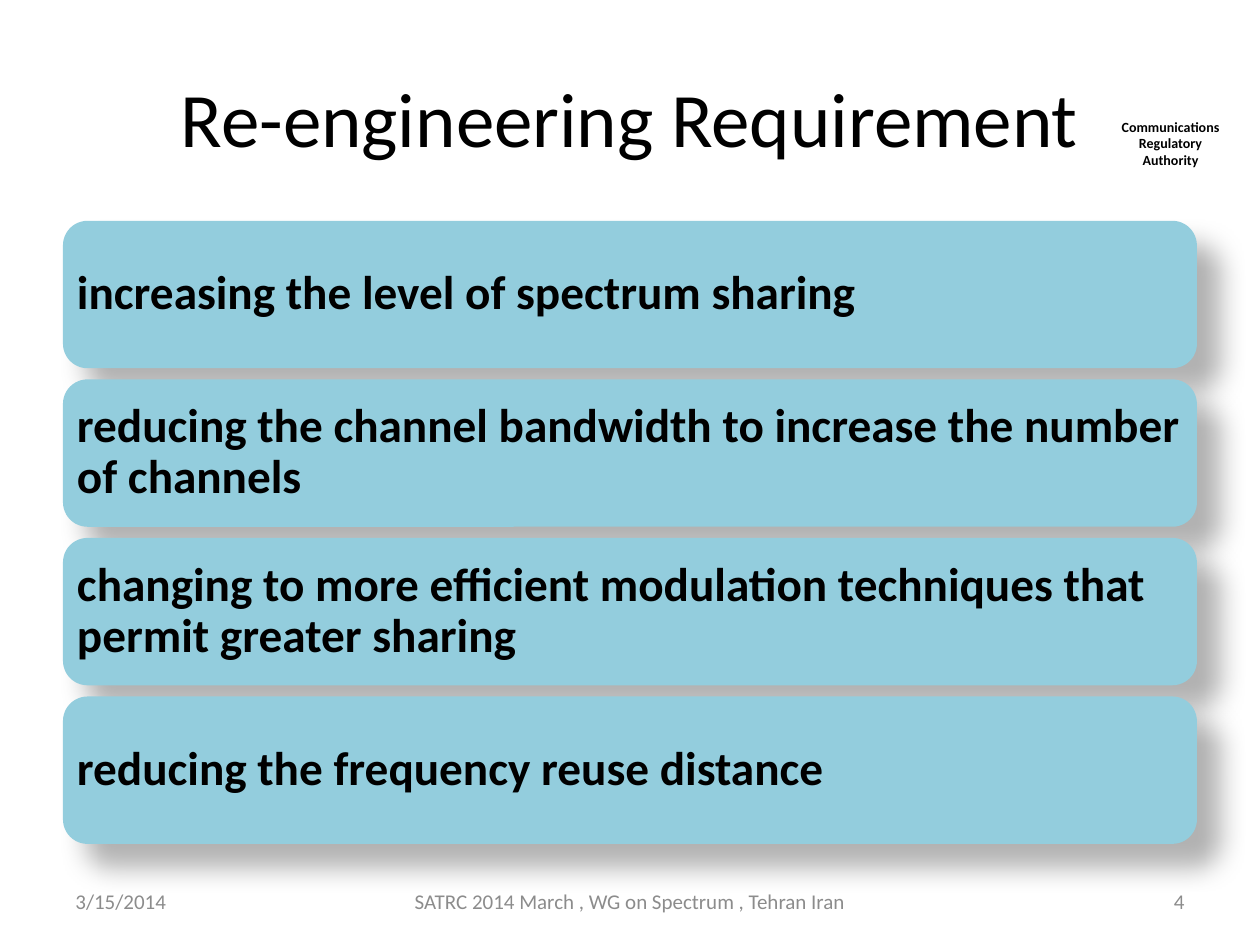
from lxml.etree import SubElement
from pptx import Presentation
from pptx.dml.color import RGBColor
from pptx.enum.shapes import MSO_SHAPE
from pptx.enum.text import MSO_ANCHOR, PP_ALIGN
from pptx.oxml.ns import qn
from pptx.util import Pt

REQUIREMENTS = [
    "increasing the level of spectrum sharing",
    "reducing the channel bandwidth to increase the number of channels",
    "changing to more efficient modulation techniques that permit greater sharing",
    "reducing the frequency reuse distance",
]
THEME = {
    "font": "Calibri", "ink": "000000", "muted": "8C8C8C", "bar": "93CDDD",
    "title": 44, "body": 27, "footer": 12, "agency": 8,
}
LABELS = [
    ("Communications Regulatory Authority", (632.2, 64, 73.4, 36),
     "agency", "ink", PP_ALIGN.CENTER, MSO_ANCHOR.TOP, True),
    ("Re-engineering Requirement", (36, 21.6, 648, 90),
     "title", "ink", PP_ALIGN.CENTER, MSO_ANCHOR.MIDDLE, False),
]
FOOTERS = [
    ("3/15/2014", 36, 168, PP_ALIGN.LEFT),
    ("SATRC 2014 March , WG on Spectrum , Tehran Iran", 224, 272, PP_ALIGN.CENTER),
    ("4", 516, 168, PP_ALIGN.RIGHT),
]
BAR_LEFT, BAR_TOP, BAR_WIDTH, BAR_HEIGHT, BAR_STEP = 36, 126.2, 648, 84.24, 90.6
FOOTER_TOP, FOOTER_HEIGHT = 500.5, 28.75


def write(shape, text, size, color, align, anchor, bold):
    frame = shape.text_frame
    frame.text = text
    frame.word_wrap = True
    frame.vertical_anchor = anchor
    para = frame.paragraphs[0]
    para.alignment = align
    font = para.runs[0].font
    font.name = THEME["font"]
    font.size = Pt(THEME[size])
    font.bold = bold
    font.color.rgb = RGBColor.from_string(THEME[color])


def add_label(page, text, place, *style):
    box = page.shapes.add_textbox(*map(Pt, place))
    write(box, text, *style)


def cast_shadow(shape):
    shape.shadow.inherit = False
    effects = shape._element.spPr.find(qn("a:effectLst"))
    shadow = SubElement(effects, qn("a:outerShdw"), blurRad=str(Pt(15)),
                        dist=str(Pt(18)), dir="2700000", algn="tl", rotWithShape="0")
    color = SubElement(shadow, qn("a:srgbClr"), val=THEME["ink"])
    SubElement(color, qn("a:alpha"), val="30000")


def add_bar(page, text, top):
    bar = page.shapes.add_shape(MSO_SHAPE.ROUNDED_RECTANGLE, Pt(BAR_LEFT), Pt(top),
                                Pt(BAR_WIDTH), Pt(BAR_HEIGHT))
    bar.fill.solid()
    bar.fill.fore_color.rgb = RGBColor.from_string(THEME["bar"])
    bar.line.fill.background()
    cast_shadow(bar)
    write(bar, text, "body", "ink", PP_ALIGN.LEFT, MSO_ANCHOR.MIDDLE, True)
    frame = bar.text_frame
    frame.margin_left = frame.margin_right = Pt(3.9)
    frame.margin_top = frame.margin_bottom = Pt(3.9)
    frame.paragraphs[0].line_spacing = 0.9


def main():
    """Build the re-engineering requirement slide."""
    deck = Presentation()
    deck.slide_width, deck.slide_height = Pt(720), Pt(540)
    page = deck.slides.add_slide(deck.slide_layouts[6])
    for label in LABELS:
        add_label(page, *label)
    for index, text in enumerate(REQUIREMENTS):
        add_bar(page, text, BAR_TOP + index * BAR_STEP)
    for text, left, width, align in FOOTERS:
        add_label(page, text, (left, FOOTER_TOP, width, FOOTER_HEIGHT),
                  "footer", "muted", align, MSO_ANCHOR.MIDDLE, False)
    deck.save("out.pptx")


if __name__ == "__main__":
    main()
